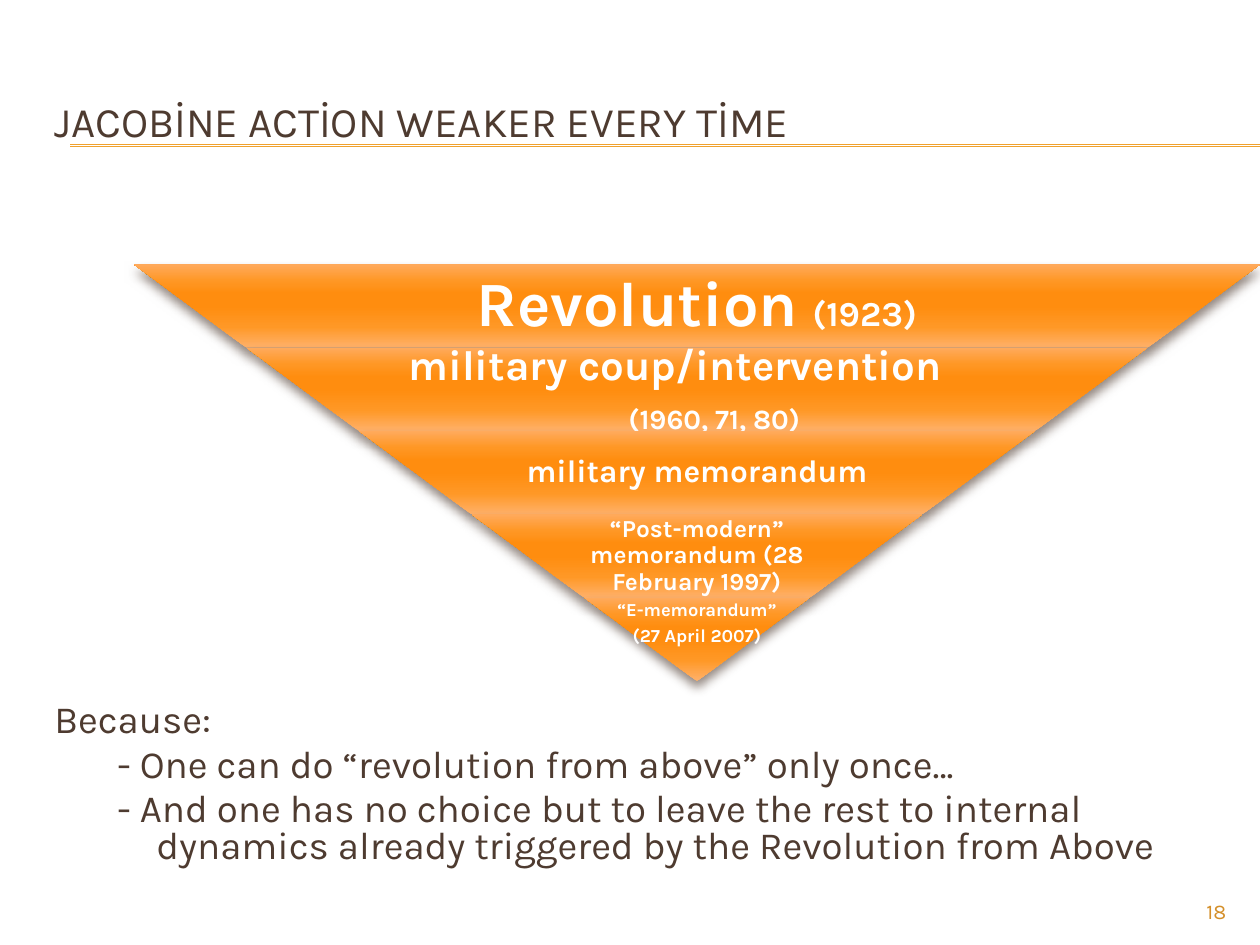
from dataclasses import dataclass

import lxml.etree
import pptx
import pptx.dml.color
import pptx.enum.shapes
import pptx.enum.text
import pptx.oxml
import pptx.oxml.ns
import pptx.util
from pptx.util import Cm, Pt

ALIGN = pptx.enum.text.PP_ALIGN
ANCHOR = pptx.enum.text.MSO_ANCHOR


@dataclass(frozen=True)
class Theme:
    font: str = "Karla"
    ink: str = "4E3B30"
    rule: str = "F0A22E"
    page: str = "D48F29"
    light: str = "FFFFFF"
    title_size: float = 24
    body_size: float = 22
    page_size: float = 12
    gradient: tuple[tuple[int, str], ...] = (
        (0, "FFB16A"), (25, "FF9826"), (50, "FF8D0F"),
        (65, "FF8D0F"), (80, "FF9724"), (100, "FFAA5C"),
    )


@dataclass(frozen=True)
class Line:
    wording: tuple[tuple[str, float], ...]
    left: float = 0
    right: float = 0
    spacing: float = 0.9
    after: float = 0.35


@dataclass(frozen=True)
class Band:
    lines: tuple[Line, ...]
    text_share: float = 0.65
    anchor: ANCHOR = ANCHOR.MIDDLE


@dataclass(frozen=True)
class Reason:
    text: str
    left: float
    hanging: float


THEME = Theme()
BANDS = (
    Band((Line((("Revolution", 36), (" ", 32), ("(1923)", 20))),)),
    Band((
        Line((("military coup/intervention", 24),), right=0.88, after=0),
        Line((("(1960, 71, 80)", 16),), left=0.7, spacing=1.35),
    )),
    Band((Line((("military memorandum", 18),)),)),
    Band((Line((("“Post-modern” memorandum (28 February 1997)", 14),)),)),
    Band(
        (Line((("“E-memorandum”", 10.5),)), Line((("(27 April 2007)", 10.5),))),
        text_share=1,
        anchor=ANCHOR.TOP,
    ),
)
REASONS = (
    Reason("Because:", 0.95, 0.95),
    Reason("- One can do “revolution from above” only once…", 2.06, 0.79),
    Reason("- And one has no choice but to leave the rest to internal dynamics "
           "already triggered by the Revolution from Above", 2.06, 0.79),
)
APEX_X, FUNNEL_TOP = 14.05, 5.33
BAND_HEIGHT, BAND_STEP = 1.68, 4.54
DRAWING_NS = pptx.oxml.ns.nsdecls("a")


def set_font(font, size: float, color: str, bold: bool = False) -> None:
    font.name, font.size, font.bold = THEME.font, Pt(size), bold
    font.color.rgb = pptx.dml.color.RGBColor.from_string(color)


def place(holder, left: float, top: float, width: float, height: float) -> None:
    holder.left, holder.top = Cm(left), Cm(top)
    holder.width, holder.height = Cm(width), Cm(height)


def indent(paragraph, left: float, right: float = 0, first: float = 0) -> None:
    properties = paragraph._p.get_or_add_pPr()
    for key, length in (("marL", left), ("marR", right), ("indent", first)):
        properties.set(key, str(int(Cm(length))))


def draw_rule(shapes, y: float) -> None:
    rule = shapes.add_connector(
        pptx.enum.shapes.MSO_CONNECTOR.STRAIGHT, Cm(1.42), Cm(y), Cm(25.4), Cm(y))
    rule.line.width = Pt(0.75)
    rule.line.color.rgb = pptx.dml.color.RGBColor.from_string(THEME.rule)
    lxml.etree.SubElement(rule._element.spPr, pptx.oxml.ns.qn("a:effectLst"))


def paint_band(trapezoid) -> None:
    trapezoid.line.fill.background()
    stops = "".join(
        f'<a:gs pos="{position * 1000}"><a:srgbClr val="{color}"/></a:gs>'
        for position, color in THEME.gradient)
    gradient = pptx.oxml.parse_xml(
        f'<a:gradFill {DRAWING_NS} rotWithShape="1"><a:gsLst>{stops}</a:gsLst>'
        '<a:lin ang="5400000" scaled="0"/></a:gradFill>')
    shadow = pptx.oxml.parse_xml(
        f'<a:effectLst {DRAWING_NS}><a:outerShdw blurRad="{Pt(6)}" dist="{Pt(4)}" '
        f'dir="5400000" rotWithShape="0"><a:srgbClr val="{THEME.ink}">'
        '<a:alpha val="60000"/></a:srgbClr></a:outerShdw></a:effectLst>')
    properties = trapezoid._element.spPr
    properties.find(pptx.oxml.ns.qn("a:prstGeom")).addnext(gradient)
    properties.append(shadow)


def draw_band(shapes, band: Band, index: int) -> None:
    width = BAND_STEP * (len(BANDS) - index)
    top = FUNNEL_TOP + BAND_HEIGHT * index
    trapezoid = shapes.add_shape(
        pptx.enum.shapes.MSO_SHAPE.TRAPEZOID,
        Cm(APEX_X - width / 2), Cm(top), Cm(width), Cm(BAND_HEIGHT))
    trapezoid.rotation = 180
    trapezoid.adjustments[0] = BAND_STEP / 2 / BAND_HEIGHT
    paint_band(trapezoid)

    text_width = width * band.text_share
    label = shapes.add_textbox(
        Cm(APEX_X - text_width / 2), Cm(top), Cm(text_width), Cm(BAND_HEIGHT))
    frame = label.text_frame
    frame.word_wrap, frame.vertical_anchor = True, band.anchor
    frame.margin_left = frame.margin_right = Cm(0.06)
    frame.margin_top = frame.margin_bottom = Cm(0.06)
    for number, line in enumerate(band.lines):
        paragraph = frame.add_paragraph() if number else frame.paragraphs[0]
        paragraph.alignment = ALIGN.CENTER
        paragraph.line_spacing = line.spacing
        size = line.wording[0][1]
        paragraph.space_after = Pt(size * line.after)
        indent(paragraph, line.left, line.right)
        set_font(paragraph.font, size, THEME.light, True)
        for text, run_size in line.wording:
            run = paragraph.add_run()
            run.text = text
            if run_size != size:
                run.font.size = Pt(run_size)


def fill_title(title) -> None:
    place(title, 0.84, 1.27, 24.13, 2.34)
    frame = title.text_frame
    frame.text = "JACOBİNE ACTİON WEAKER EVERY TİME"
    frame.auto_size = pptx.enum.text.MSO_AUTO_SIZE.NONE
    frame.vertical_anchor = ANCHOR.MIDDLE
    frame.paragraphs[0].alignment = ALIGN.LEFT
    set_font(frame.paragraphs[0].font, THEME.title_size, THEME.ink)


def fill_reasons(body) -> None:
    place(body, 0.84, 4.32, 24.13, 13.61)
    frame = body.text_frame
    frame.auto_size = pptx.enum.text.MSO_AUTO_SIZE.NONE
    frame.vertical_anchor = ANCHOR.BOTTOM
    frame.margin_bottom = Cm(0.45)
    for number, reason in enumerate(REASONS):
        paragraph = frame.add_paragraph() if number else frame.paragraphs[0]
        paragraph.text = reason.text
        paragraph.level = min(number, 1)
        paragraph.line_spacing = 0.8
        paragraph.space_before = Pt(THEME.body_size * 0.2)
        indent(paragraph, reason.left, first=-reason.hanging)
        lxml.etree.SubElement(paragraph._p.pPr, pptx.oxml.ns.qn("a:buNone"))
        set_font(paragraph.font, THEME.body_size, THEME.ink)


def draw_page_number(shapes) -> None:
    page = shapes.add_textbox(Cm(22.86), Cm(17.98), Cm(2.11), Cm(0.69))
    page.text_frame.word_wrap = True
    paragraph = page.text_frame.paragraphs[0]
    paragraph.text, paragraph.alignment = "18", ALIGN.RIGHT
    set_font(paragraph.font, THEME.page_size, THEME.page)


def main() -> None:
    deck = pptx.Presentation()
    deck.slide_width, deck.slide_height = Cm(25.4), Cm(19.05)
    slide = deck.slides.add_slide(deck.slide_layouts[1])
    for y in (2.92, 2.95):
        draw_rule(slide.shapes, y)
    fill_reasons(slide.placeholders[1])
    fill_title(slide.shapes.title)
    draw_page_number(slide.shapes)
    funnel = slide.shapes.add_group_shape()
    for index, band in enumerate(BANDS):
        draw_band(funnel.shapes, band, index)
    deck.save("out.pptx")


if __name__ == "__main__":
    main()
